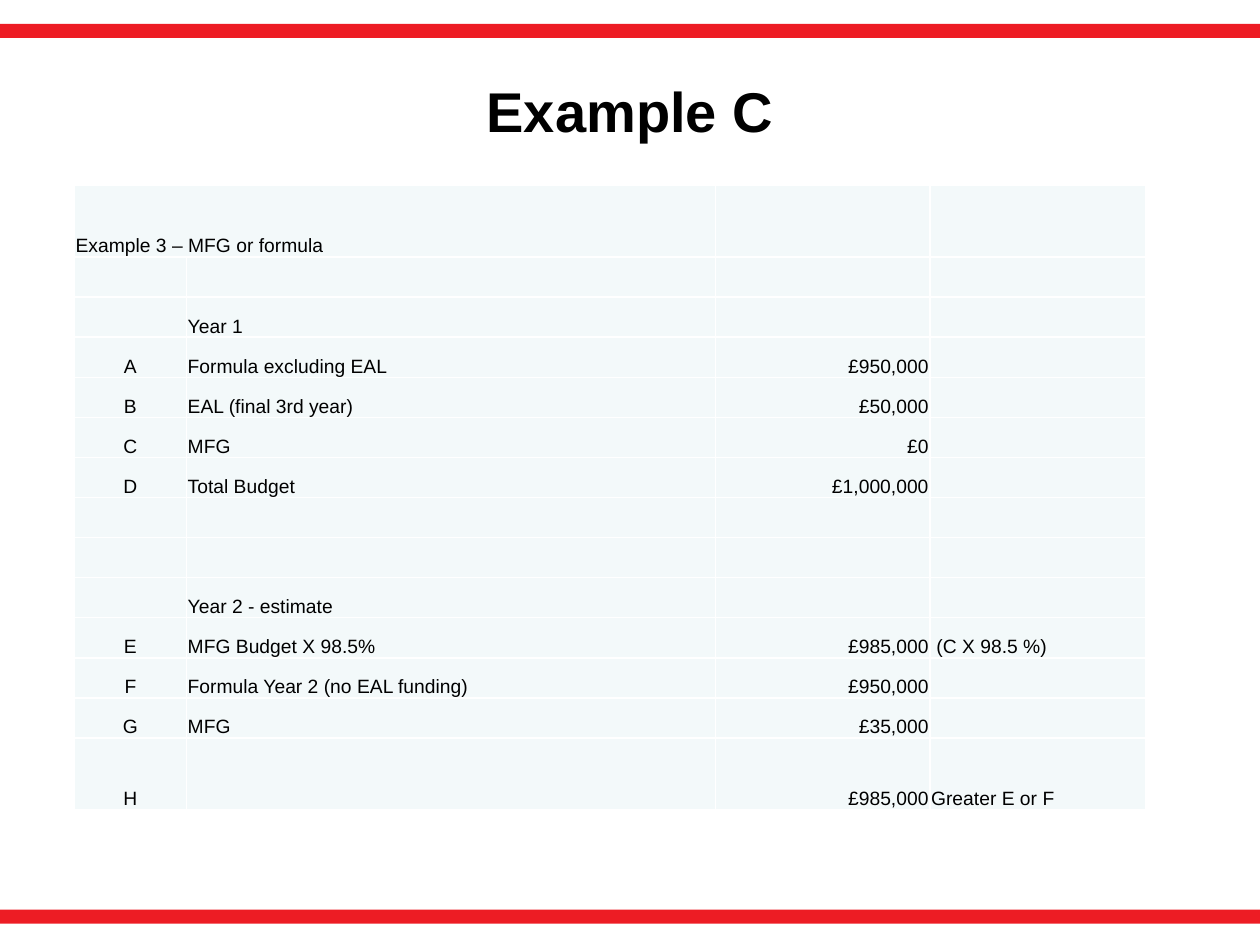
from typing import NamedTuple

from lxml import etree
from pptx import Presentation
from pptx.dml.color import RGBColor
from pptx.enum.shapes import MSO_SHAPE
from pptx.enum.text import MSO_ANCHOR, PP_ALIGN
from pptx.oxml.ns import qn
from pptx.util import Inches, Pt

RECTANGLE = MSO_SHAPE.RECTANGLE
MIDDLE, BOTTOM = MSO_ANCHOR.MIDDLE, MSO_ANCHOR.BOTTOM
LEFT, CENTER, RIGHT = PP_ALIGN.LEFT, PP_ALIGN.CENTER, PP_ALIGN.RIGHT

FONT = "Arial"
COLORS = {"band": "ED1C24", "cell": "F3F9FA", "border": "FFFFFF", "text": "000000"}
COLUMN_WIDTHS = (0.89, 4.2, 1.7, 1.71)
COLUMN_ALIGNMENTS = (CENTER, LEFT, RIGHT, LEFT)
TABLE_HEIGHT = 4.96
TALL_ROW = 0.57  # first and last rows


class BudgetLine(NamedTuple):
    label: str = ""
    item: str = ""
    amount: str = ""
    note: str = ""


BUDGET_LINES = (
    BudgetLine("Example 3 – MFG or formula"),
    BudgetLine(),
    BudgetLine(item="Year 1"),
    BudgetLine("A", "Formula excluding EAL", "£950,000"),
    BudgetLine("B", "EAL (final 3rd year)", "£50,000"),
    BudgetLine("C", "MFG", "£0"),
    BudgetLine("D", "Total Budget", "£1,000,000"),
    BudgetLine(),
    BudgetLine(),
    BudgetLine(item="Year 2 - estimate"),
    BudgetLine("E", "MFG Budget X 98.5%", "£985,000", " (C X 98.5 %)"),
    BudgetLine("F", "Formula Year 2 (no EAL funding)", "£950,000"),
    BudgetLine("G", "MFG", "£35,000"),
    BudgetLine("H", "", "£985,000", "Greater E or F"),
)


def add_text(paragraph, text: str, size: float, align, bold: bool = False) -> None:
    paragraph.alignment = align
    run = paragraph.add_run()
    run.text = text
    run.font.name = FONT
    run.font.size = Pt(size)
    run.font.bold = bold
    run.font.color.rgb = RGBColor.from_string(COLORS["text"])


def add_band(slide, top: float) -> None:
    band = slide.shapes.add_shape(
        RECTANGLE, Inches(0), Inches(top), Inches(10), Inches(0.11))
    band.shadow.inherit = False
    band.fill.solid()
    band.fill.fore_color.rgb = RGBColor.from_string(COLORS["band"])
    band.line.fill.background()


def style_cell(cell) -> None:
    cell.vertical_anchor = BOTTOM
    cell.margin_left = cell.margin_right = cell.margin_top = Inches(0.01)
    cell.margin_bottom = Inches(0)
    # Borders must come before the fill in the cell properties
    properties = cell._tc.get_or_add_tcPr()
    for side in ("lnL", "lnR", "lnT", "lnB"):
        border = etree.SubElement(properties, qn(f"a:{side}"), w=str(Pt(1)))
        fill = etree.SubElement(border, qn("a:solidFill"))
        etree.SubElement(fill, qn("a:srgbClr"), val=COLORS["border"])
    cell.fill.solid()
    cell.fill.fore_color.rgb = RGBColor.from_string(COLORS["cell"])


def add_budget_table(slide) -> None:
    row_count = len(BUDGET_LINES)
    table = slide.shapes.add_table(
        row_count, len(COLUMN_WIDTHS), Inches(0.59), Inches(1.47),
        Inches(sum(COLUMN_WIDTHS)), Inches(TABLE_HEIGHT)).table
    table.first_row = table.horz_banding = False
    for column, width in zip(table.columns, COLUMN_WIDTHS):
        column.width = Inches(width)

    normal_row = (TABLE_HEIGHT - 2 * TALL_ROW) / (row_count - 2)
    for index, budget_line in enumerate(BUDGET_LINES):
        is_tall = index in (0, row_count - 1)
        table.rows[index].height = Inches(TALL_ROW if is_tall else normal_row)
        for column, (text, align) in enumerate(zip(budget_line, COLUMN_ALIGNMENTS)):
            cell = table.cell(index, column)
            style_cell(cell)
            if text:
                add_text(cell.text_frame.paragraphs[0], text, 11,
                         LEFT if index == 0 else align)
    table.cell(0, 0).merge(table.cell(0, 1))


def main() -> None:
    presentation = Presentation()
    presentation.slide_width, presentation.slide_height = Inches(10), Inches(7.5)
    slide = presentation.slides.add_slide(presentation.slide_layouts[5])

    # Red bands at the top and bottom
    for top in (0.19, 7.22):
        add_band(slide, top)

    # Title
    title = slide.shapes.title
    title.left, title.top = Inches(0.5), Inches(0.3)
    title.width, title.height = Inches(9), Inches(1.25)
    title.text_frame.vertical_anchor = MIDDLE
    title.text_frame.margin_bottom = Inches(0.16)
    add_text(title.text_frame.paragraphs[0], "Example C", 32, CENTER, bold=True)

    # Budget comparison
    add_budget_table(slide)
    presentation.save("out.pptx")


if __name__ == "__main__":
    main()
